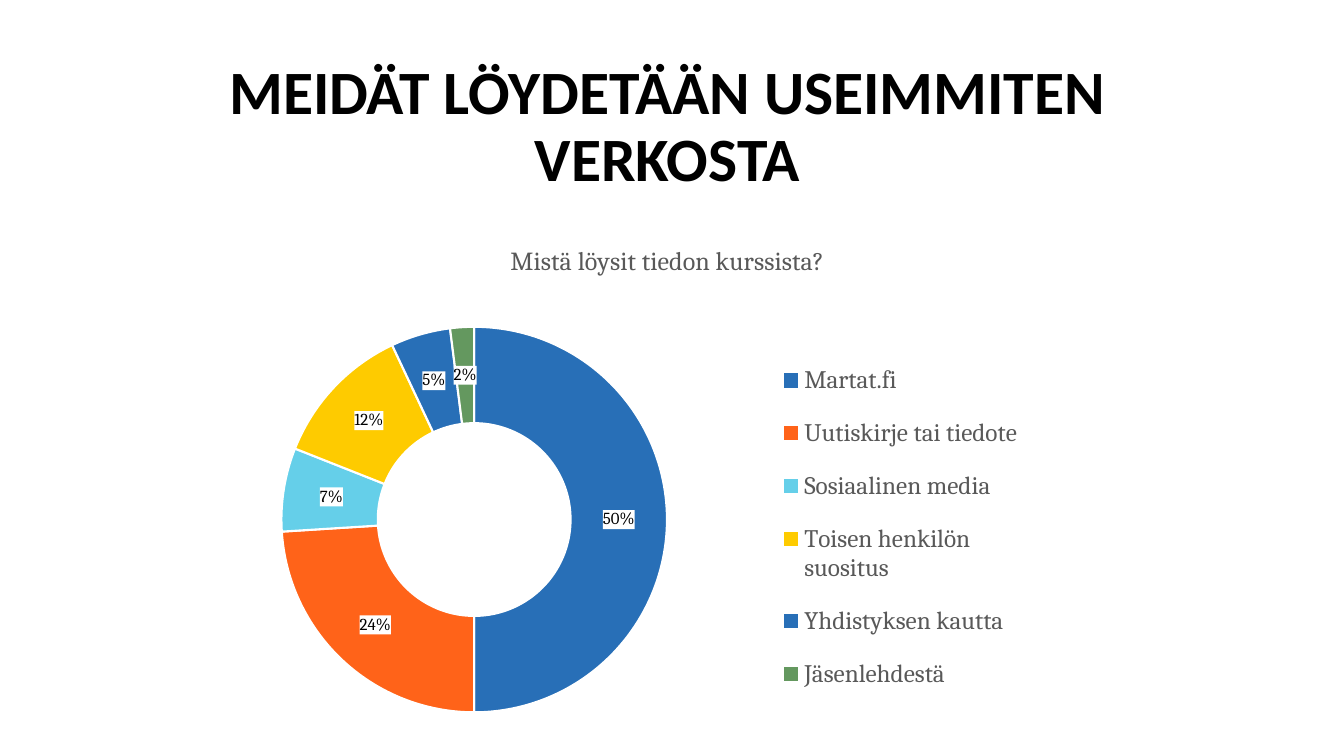
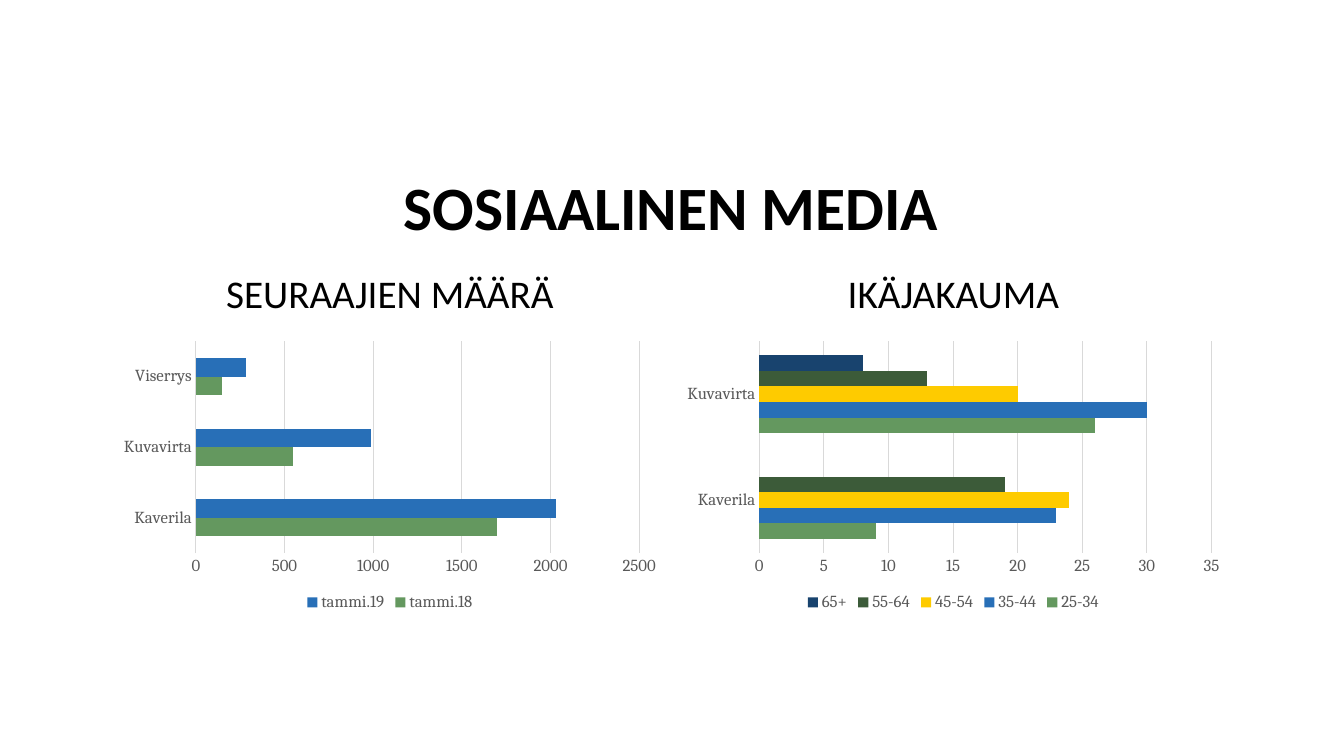
from lxml import etree
from pptx import Presentation
from pptx.chart.data import CategoryChartData
from pptx.dml.color import RGBColor
from pptx.enum.chart import XL_CHART_TYPE, XL_LEGEND_POSITION, XL_TICK_MARK
from pptx.enum.text import MSO_ANCHOR, MSO_AUTO_SIZE, PP_ALIGN
from pptx.oxml import parse_xml
from pptx.oxml.ns import nsdecls, qn
from pptx.util import Cm, Pt

DOUGHNUT = XL_CHART_TYPE.DOUGHNUT
BAR = XL_CHART_TYPE.BAR_CLUSTERED
LEGEND_BOTTOM = XL_LEGEND_POSITION.BOTTOM
NO_TICK = XL_TICK_MARK.NONE
CENTER = PP_ALIGN.CENTER
MIDDLE = MSO_ANCHOR.MIDDLE
BOTTOM = MSO_ANCHOR.BOTTOM
NO_AUTOFIT = MSO_AUTO_SIZE.NONE

BLACK = RGBColor(0x00, 0x00, 0x00)
WHITE = RGBColor(0xFF, 0xFF, 0xFF)
GRAY = RGBColor(0x59, 0x59, 0x59)
GRID = RGBColor(0xD9, 0xD9, 0xD9)
BLUE = RGBColor(0x28, 0x6F, 0xB7)
ORANGE = RGBColor(0xFF, 0x63, 0x19)
CYAN = RGBColor(0x65, 0xCF, 0xE9)
YELLOW = RGBColor(0xFE, 0xCB, 0x00)
GREEN = RGBColor(0x64, 0x98, 0x5F)
DARK_GREEN = RGBColor(0x3C, 0x5B, 0x39)
NAVY = RGBColor(0x18, 0x43, 0x6E)
HEADING_FONT = "Calibri"
CHART_FONT = "Cambria"
TITLE_SIZE = (Cm(28.17), Cm(3.81))


def write(text_frame, text, size, color=BLACK, font=HEADING_FONT, bold=False, anchor=None):
    text_frame.text = text
    if anchor is not None:
        text_frame.vertical_anchor = anchor
        text_frame.auto_size = NO_AUTOFIT
        text_frame.word_wrap = True
    paragraph = text_frame.paragraphs[0]
    paragraph.alignment = CENTER
    paragraph.line_spacing = 0.9
    paragraph.space_before = Pt(0)
    run_font = paragraph.runs[0].font
    run_font.name = font
    run_font.size = Pt(size)
    run_font.bold = bold
    run_font.color.rgb = color


def place_inside_chart(parent, index, x, y, w, h, inner=False):
    for old_layout in parent.findall(qn("c:layout")):
        parent.remove(old_layout)
    layout = parse_xml(f"<c:layout {nsdecls('c')}><c:manualLayout/></c:layout>")
    settings = [("layoutTarget", "inner")] if inner else []
    settings += [("xMode", "edge"), ("yMode", "edge"), ("x", x), ("y", y), ("w", w), ("h", h)]
    for name, value in settings:
        etree.SubElement(layout[0], qn(f"c:{name}")).set("val", str(value))
    parent.insert(index, layout)


presentation = Presentation()
presentation.slide_width = Cm(33.87)
presentation.slide_height = Cm(19.05)

slides = []
for layout_index, title, left, top in (
    (5, "MEIDÄT LÖYDETÄÄN USEIMMITEN VERKOSTA", 2.74, 1.22),
    (4, "SOSIAALINEN MEDIA", 2.84, 2.46),
):
    slide = presentation.slides.add_slide(presentation.slide_layouts[layout_index])
    shape = slide.shapes.title
    shape.left, shape.top = Cm(left), Cm(top)
    shape.width, shape.height = TITLE_SIZE
    write(shape.text_frame, title, 44, bold=True, anchor=BOTTOM)
    slides.append(slide)
source_slide, social_slide = slides

sources = [
    ("Martat.fi", 50, BLUE),
    ("Uutiskirje tai tiedote", 24, ORANGE),
    ("Sosiaalinen media", 7, CYAN),
    ("Toisen henkilön suositus", 12, YELLOW),
    ("Yhdistyksen kautta", 5, BLUE),
    ("Jäsenlehdestä", 2, GREEN),
]
question = "Mistä löysit tiedon kurssista?"
chart_data = CategoryChartData()
chart_data.categories = [name for name, share, color in sources]
chart_data.add_series(question, [share for name, share, color in sources])
chart = source_slide.shapes.add_chart(
    DOUGHNUT, Cm(6.88), Cm(5.61), Cm(19.89), Cm(13.13), chart_data
).chart
chart.font.name = CHART_FONT
chart.font.size = Pt(10)
chart.has_title = True
write(chart.chart_title.text_frame, question, 18.6, color=GRAY, font=CHART_FONT)
chart.has_legend = True
chart.legend.position = LEGEND_BOTTOM
chart.legend.include_in_layout = False
chart.legend.font.name = CHART_FONT
chart.legend.font.size = Pt(18)
chart.legend.font.color.rgb = GRAY

plot = chart.plots[0]
plot.vary_by_categories = True
for index, (name, share, color) in enumerate(sources):
    slice_format = plot.series[0].points[index].format
    slice_format.fill.solid()
    slice_format.fill.fore_color.rgb = color
    slice_format.line.color.rgb = WHITE
    slice_format.line.width = Pt(1.5)
labels = plot.series[0].data_labels
labels.show_percentage = True
labels.show_value = False
labels.number_format = "0%"
labels.number_format_is_linked = False
labels.font.name = CHART_FONT
labels.font.size = Pt(12)
labels.font.color.rgb = BLACK
label_fill = parse_xml(
    f"<c:spPr {nsdecls('c', 'a')}><a:solidFill><a:srgbClr val='{WHITE}'/></a:solidFill></c:spPr>"
)
labels._element.find(qn("c:txPr")).addprevious(label_fill)

chart_space = chart._chartSpace
chart_space.find(f".//{qn('c:holeSize')}").set("val", "75")
plot_area = chart_space.find(f".//{qn('c:plotArea')}")
place_inside_chart(plot_area, 0, 0.01, 0.2, 0.49, 0.74, inner=True)
place_inside_chart(chart.legend._element, 1, 0.63, 0.23, 0.33, 0.71)

follower_series = [
    ("tammi.18", (1700, 550, 150), GREEN),
    ("tammi.19", (2030, 990, 280), BLUE),
]
age_series = [
    ("25-34", (9, 26), GREEN),
    ("35-44", (23, 30), BLUE),
    ("45-54", (24, 20), YELLOW),
    ("55-64", (19, 13), DARK_GREEN),
    ("65+", (None, 8), NAVY),
]
channels = ["Kaverila", "Kuvavirta", "Viserrys"]
columns = [
    (1, "SEURAAJIEN MÄÄRÄ", channels, follower_series),
    (3, "IKÄJAKAUMA", channels[:2], age_series),
]
placeholders = {shape.placeholder_format.idx: shape for shape in social_slide.placeholders}
for column, (heading_idx, heading, categories, series_rows) in enumerate(columns):
    left = Cm(2.84 + column * 14.2)
    width = Cm(13.97)
    shape = placeholders[heading_idx]
    shape.left, shape.top, shape.width, shape.height = left, Cm(6.48), width, Cm(1.96)
    write(shape.text_frame, heading, 28, anchor=MIDDLE)
    empty = placeholders[heading_idx + 1]._element
    empty.getparent().remove(empty)

    chart_data = CategoryChartData()
    chart_data.categories = categories
    for name, values, color in series_rows:
        chart_data.add_series(name, values)
    chart = social_slide.shapes.add_chart(
        BAR, left, Cm(8.46), width, Cm(7.06), chart_data
    ).chart
    chart.has_title = False
    chart.font.name = CHART_FONT
    chart.font.size = Pt(10)
    chart.has_legend = True
    chart.legend.position = LEGEND_BOTTOM
    chart.legend.include_in_layout = False

    plot = chart.plots[0]
    plot.vary_by_categories = False
    plot.gap_width = 182
    plot.overlap = 0
    for series, (name, values, color) in zip(plot.series, series_rows):
        series.format.fill.solid()
        series.format.fill.fore_color.rgb = color

    category_axis, value_axis = chart.category_axis, chart.value_axis
    for axis in (category_axis, value_axis):
        axis.major_tick_mark = NO_TICK
        axis.minor_tick_mark = NO_TICK
    for font in (category_axis.tick_labels.font, value_axis.tick_labels.font, chart.legend.font):
        font.name = CHART_FONT
        font.size = Pt(12)
        font.color.rgb = GRAY
    value_axis.has_major_gridlines = True
    value_axis.format.line.fill.background()
    for line in (category_axis.format.line, value_axis.major_gridlines.format.line):
        line.color.rgb = GRID
        line.width = Pt(0.75)

presentation.save("out.pptx")
